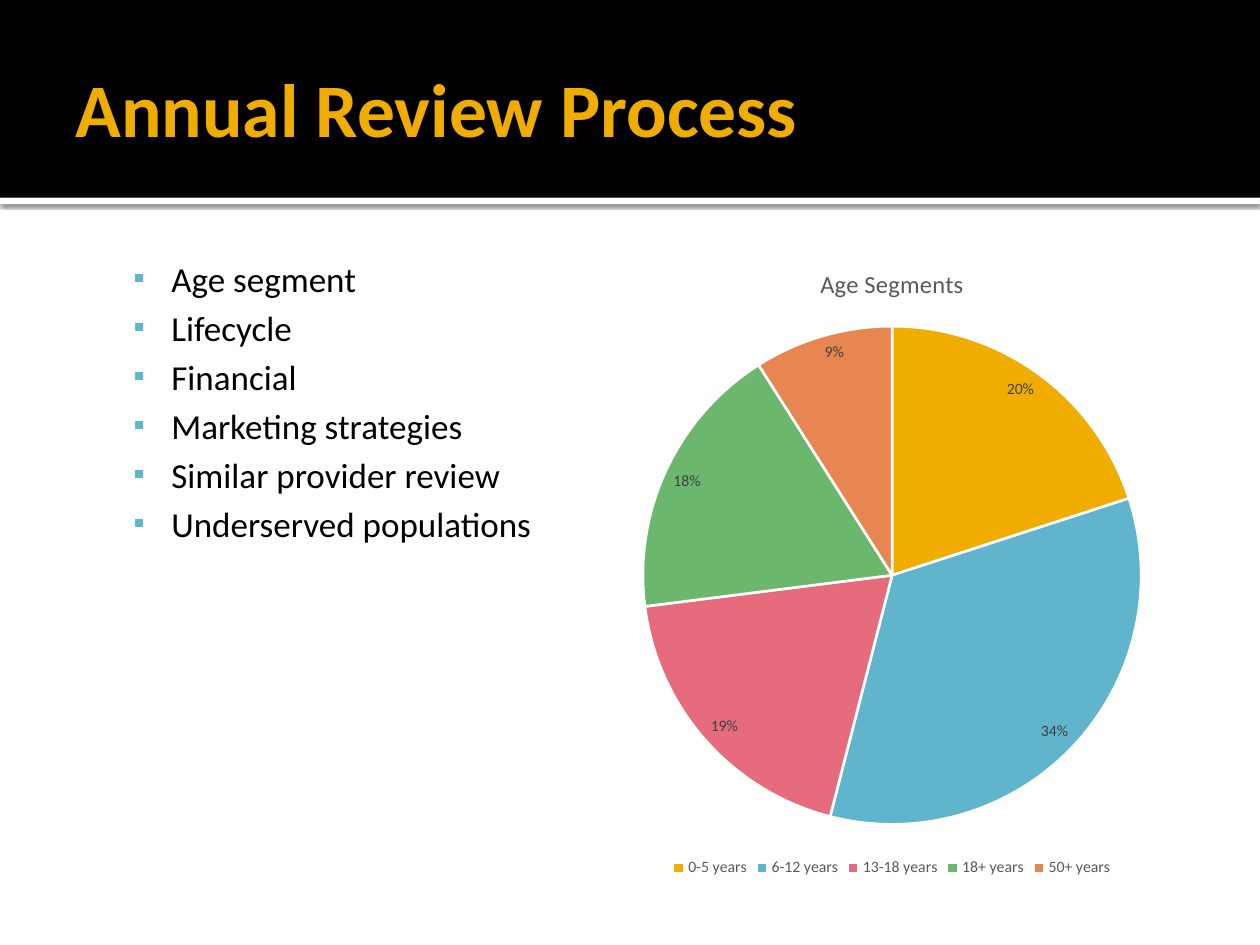
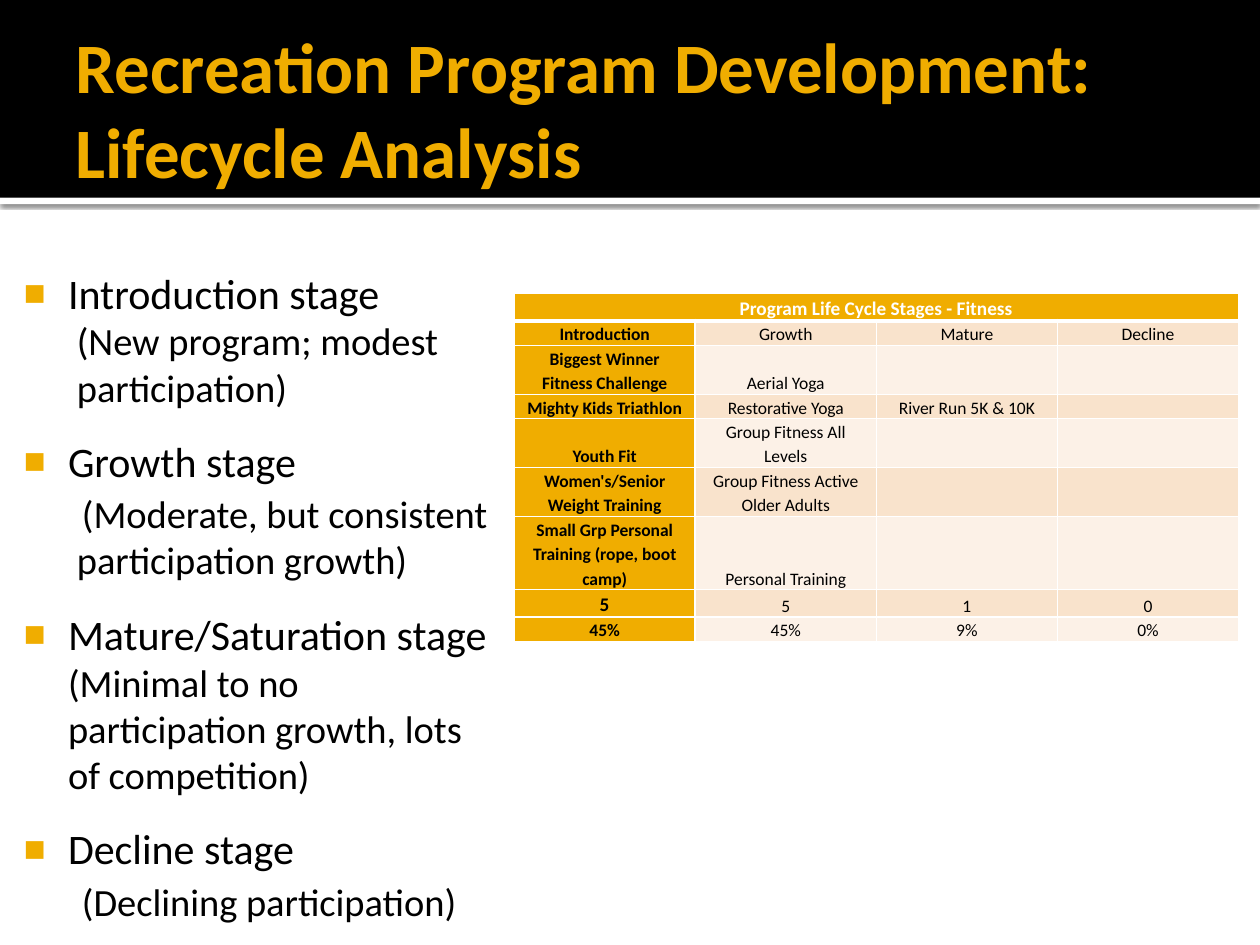
from lxml import etree
from pptx import Presentation
from pptx.chart.data import CategoryChartData
from pptx.dml.color import RGBColor
from pptx.enum.chart import XL_CHART_TYPE, XL_LABEL_POSITION, XL_LEGEND_POSITION
from pptx.enum.shapes import MSO_SHAPE
from pptx.enum.text import MSO_ANCHOR, MSO_AUTO_SIZE, PP_ALIGN
from pptx.oxml import parse_xml
from pptx.oxml.ns import nsdecls, qn
from pptx.util import Inches, Pt

RECTANGLE = MSO_SHAPE.RECTANGLE
PIE = XL_CHART_TYPE.PIE
BOTTOM_LEGEND = XL_LEGEND_POSITION.BOTTOM
INSIDE_END = XL_LABEL_POSITION.INSIDE_END
MIDDLE, TOP, BOTTOM = MSO_ANCHOR.MIDDLE, MSO_ANCHOR.TOP, MSO_ANCHOR.BOTTOM
LEFT, CENTER = PP_ALIGN.LEFT, PP_ALIGN.CENTER
NO_AUTOFIT = MSO_AUTO_SIZE.NONE

FONT = "Calibri"
COLORS = {
    "black": "000000", "white": "FFFFFF", "gold": "F0AD00", "blue": "60B5CC",
    "pink": "E66C7D", "green": "6BB76D", "orange": "E88651",
    "gray": "595959", "dark gray": "404040",
    "light band": "FCF1E7", "dark band": "F9E3CC",
}
RGB = {name: RGBColor.from_string(value) for name, value in COLORS.items()}

presentation = Presentation()
presentation.slide_width, presentation.slide_height = Inches(10), Inches(7.5)


def area(left, top, width, height):
    """Turn percentages of the slide into left, top, width and height."""
    across, down = presentation.slide_width / 100, presentation.slide_height / 100
    return int(left * across), int(top * down), int(width * across), int(height * down)


def style_font(font, size, color, bold=False):
    font.name, font.size, font.bold = FONT, Pt(size), bold
    font.color.rgb = RGB[color]


# Shared header: black band over a white rule with a soft shadow
layout = presentation.slide_layouts[1]
slides = [presentation.slides.add_slide(layout) for _ in range(2)]
header_parts = [("white", area(0, 20.93, 100, 0.67)), ("black", area(0, 0, 100, 20.93))]
for position, (color, place) in enumerate(header_parts):
    shape = slides[0].shapes.add_shape(RECTANGLE, *place)
    shape.shadow.inherit = False
    shape.fill.solid()
    shape.fill.fore_color.rgb = RGB[color]
    shape.line.fill.background()
    if color == "white":
        effects = shape.element.spPr.find(qn("a:effectLst"))
        effects.append(parse_xml(
            f'<a:outerShdw {nsdecls("a")} blurRad="{Pt(2.5)}" dist="{Pt(0.8)}" dir="5400000">'
            f'<a:srgbClr val="{COLORS["black"]}"><a:alpha val="60000"/></a:srgbClr></a:outerShdw>'))
    layout.shapes.element.insert(2 + position, shape.element)

# Titles
titles = [("Annual Review Process", 43.2),
          ("Recreation Program Development: Lifecycle Analysis", 40.5)]
for slide, (text, size) in zip(slides, titles):
    title = slide.shapes.title
    title.left, title.top, title.width, title.height = area(5, 2.27, 90, 18.27)
    frame = title.text_frame
    frame.text = text
    frame.auto_size, frame.vertical_anchor = NO_AUTOFIT, MIDDLE
    frame.margin_left, frame.margin_right = Inches(0.1), Inches(0.05)
    frame.paragraphs[0].alignment = LEFT
    style_font(frame.paragraphs[0].font, size, "gold", bold=True)

# Lists: runs, bullet, margin, first-line indent, space before
segment_bullet = ("▪", "blue", 90)
stage_bullet = ("■", "gold", 55)
topics = ["Age segment", "Lifecycle", "Financial", "Marketing strategies",
          "Similar provider review", "Underserved populations"]
topic_lines = [([(topic, 20)], segment_bullet, 0.8, -0.3, 4) for topic in topics]

stages = [
    ("Introduction stage", "(New program; modest participation)", 0, 0),
    ("Growth stage", "(Moderate, but consistent participation growth)", 0.04, 2.5),
    ("Mature/Saturation stage ", "(Minimal to no participation growth, lots of competition)", None, 0),
    ("Decline stage", "(Declining participation)", 0.04, 2.5),
]
stage_lines = []
for number, (stage, detail, indent, gap) in enumerate(stages):
    runs = [(stage, 24)]
    if indent is None:
        runs.append((detail, 22))
    stage_lines.append((runs, stage_bullet, 0.48, -0.35, 14.65 if number else 0))
    if indent is not None:
        stage_lines.append(([(detail, 22)], None, 0.55, indent, gap))

bodies = [(topic_lines, area(5, 25.87, 90, 67.47)),
          (stage_lines, area(0, 26.93, 40.8, 70.8))]
for slide, (lines, place) in zip(slides, bodies):
    body = slide.placeholders[1]
    body.left, body.top, body.width, body.height = place
    frame = body.text_frame
    frame.auto_size, frame.vertical_anchor = NO_AUTOFIT, TOP
    frame.margin_left, frame.margin_top = Inches(0.06), Inches(0.1)
    for number, (runs, bullet, margin, indent, gap) in enumerate(lines):
        paragraph = frame.add_paragraph() if number else frame.paragraphs[0]
        paragraph.space_before = Pt(gap)
        properties = paragraph._p.get_or_add_pPr()
        properties.set("marL", str(Inches(margin)))
        properties.set("indent", str(Inches(indent)))
        if bullet:
            symbol, color, percent = bullet
            bullet_color = etree.SubElement(properties, qn("a:buClr"))
            etree.SubElement(bullet_color, qn("a:srgbClr"), val=COLORS[color])
            etree.SubElement(properties, qn("a:buSzPct"), val=str(percent * 1000))
            etree.SubElement(properties, qn("a:buFont"), typeface=FONT)
            etree.SubElement(properties, qn("a:buChar"), char=symbol)
        else:
            etree.SubElement(properties, qn("a:buNone"))
        style_font(paragraph.font, runs[0][1], "black")
        for text, size in runs:
            run = paragraph.add_run()
            run.text = text
            if size != runs[0][1]:
                run.font.size = Pt(size)

# Pie chart of age segments
segments = [("0-5 years", 20, "gold"), ("6-12 years", 34, "blue"), ("13-18 years", 19, "pink"),
            ("18+ years", 18, "green"), ("50+ years", 9, "orange")]
chart_data = CategoryChartData()
chart_data.categories = [name for name, _, _ in segments]
chart_data.add_series("Series 1", [value for _, value, _ in segments])
chart = slides[0].shapes.add_chart(PIE, *area(43.3, 25.73, 55, 67.6), chart_data).chart
style_font(chart.font, 10, "black")
chart.has_title = True
chart.chart_title.text_frame.text = "Age Segments"
style_font(chart.chart_title.text_frame.paragraphs[0].font, 14, "gray")
chart.has_legend = True
chart.legend.position, chart.legend.include_in_layout = BOTTOM_LEGEND, False
style_font(chart.legend.font, 9, "gray")

plot = chart.plots[0]
plot.vary_by_categories = True
plot.has_data_labels = True
labels = plot.data_labels
labels.show_percentage, labels.show_value = True, False
labels.number_format, labels.number_format_is_linked = "0%", False
labels.position = INSIDE_END
style_font(labels.font, 9, "dark gray")
for number, (_, _, color) in enumerate(segments):
    slice_format = plot.series[0].points[number].format
    slice_format.fill.solid()
    slice_format.fill.fore_color.rgb = RGB[color]
    slice_format.line.color.rgb = RGB["white"]
    slice_format.line.width = Pt(1.5)

# Fixed place for the pie inside the chart
plot_area = chart._chartSpace.chart.plotArea
for old_layout in plot_area.findall(qn("c:layout")):
    plot_area.remove(old_layout)
plot_layout = etree.Element(qn("c:layout"))
manual = etree.SubElement(plot_layout, qn("c:manualLayout"))
for tag, value in [("layoutTarget", "inner"), ("xMode", "edge"), ("yMode", "edge"),
                   ("x", "0.14"), ("y", "0.13"), ("w", "0.72"), ("h", "0.78")]:
    etree.SubElement(manual, qn(f"c:{tag}"), val=value)
plot_area.insert(0, plot_layout)

# Table of life cycle stages
programs = [
    ["Program Life Cycle Stages - Fitness", "", "", ""],
    ["Introduction", "Growth", "Mature", "Decline"],
    ["Biggest Winner Fitness Challenge", "Aerial Yoga", "", ""],
    ["Mighty Kids Triathlon", "Restorative Yoga", "River Run 5K & 10K", ""],
    ["Youth Fit", "Group Fitness All Levels", "", ""],
    ["Women's/Senior Weight Training", "Group Fitness Active Older Adults", "", ""],
    ["Small Grp Personal Training (rope, boot camp)", "Personal Training", "", ""],
    ["5", "5", "1", "0"],
    ["45%", "45%", "9%", "0%"],
]
row_heights = [0.2, 0.19, 0.37, 0.19, 0.37, 0.37, 0.56, 0.2, 0.19]
table = slides[1].shapes.add_table(len(programs), 4, *area(40.8, 31.07, 57.5, 32.53)).table
for row, height in zip(table.rows, row_heights):
    row.height = Inches(height)
table.cell(0, 0).merge(table.cell(0, 3))
for row_number, texts in enumerate(programs):
    for column_number, text in enumerate(texts):
        cell = table.cell(row_number, column_number)
        is_header = row_number == 0
        is_first = column_number == 0
        cell.margin_left = cell.margin_right = Inches(0.07)
        cell.margin_top = cell.margin_bottom = 0
        cell.vertical_anchor = BOTTOM
        for side in "LRTB":
            width = Pt(3 if (is_header and side == "B") or (row_number == 1 and side == "T") else 1)
            border = etree.SubElement(cell._tc.get_or_add_tcPr(), qn(f"a:ln{side}"), w=str(width))
            border_fill = etree.SubElement(border, qn("a:solidFill"))
            etree.SubElement(border_fill, qn("a:srgbClr"), val=COLORS["white"])
        band = "dark band" if row_number % 2 else "light band"
        cell.fill.solid()
        cell.fill.fore_color.rgb = RGB["gold" if is_header or is_first else band]
        paragraph = cell.text_frame.paragraphs[0]
        paragraph.alignment, paragraph.line_spacing = CENTER, 1.15
        size = 11 if is_header or (is_first and text == "5") else 10
        style_font(paragraph.font, size, "white" if is_header else "black", is_header or is_first)
        if text:
            paragraph.add_run().text = text
        else:
            etree.SubElement(paragraph._p, qn("a:endParaRPr"), sz=str(size * 100))

presentation.save("out.pptx")
